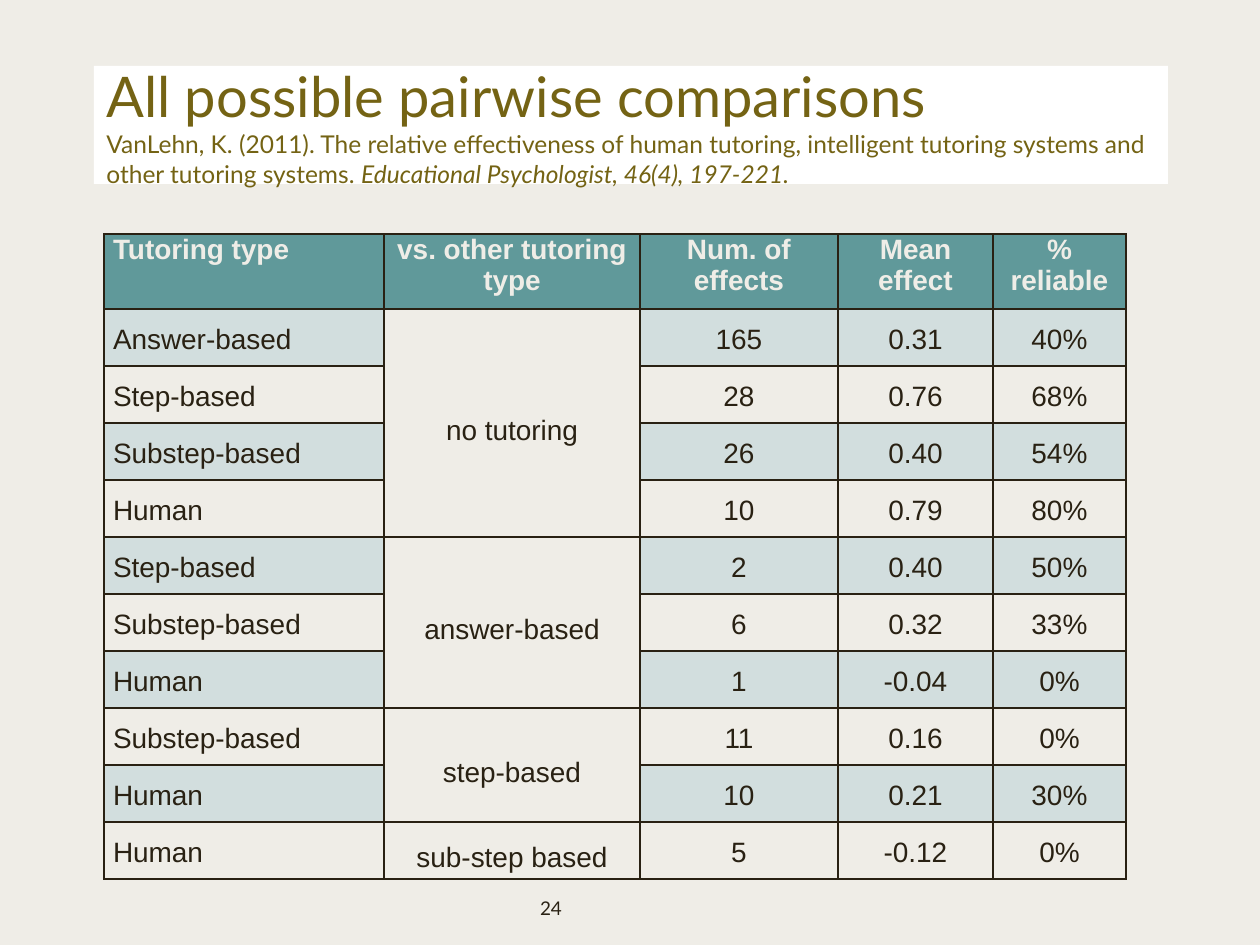
from dataclasses import dataclass

from lxml import etree
from pptx import Presentation, util as u
from pptx.dml.color import RGBColor
from pptx.enum import text as t
from pptx.oxml.ns import qn

TITLE = "All possible pairwise comparisons"
CITATION = ("VanLehn, K. (2011). The relative effectiveness of human tutoring, "
            "intelligent tutoring systems and other tutoring systems. ")
JOURNAL = "Educational Psychologist, 46(4), 197-221."
PAGE_NUMBER = "24"

HEADERS = ["Tutoring type", "vs. other tutoring type", "Num. of effects",
           "Mean effect", "% reliable"]
# Each comparison type with its rows: tutoring type, effects, mean, reliable
COMPARISONS = [
    ("no tutoring", [
        ("Answer-based", "165", "0.31", "40%"),
        ("Step-based", "28", "0.76", "68%"),
        ("Substep-based", "26", "0.40", "54%"),
        ("Human", "10", "0.79", "80%"),
    ]),
    ("answer-based", [
        ("Step-based", "2", "0.40", "50%"),
        ("Substep-based", "6", "0.32", "33%"),
        ("Human", "1", "-0.04", "0%"),
    ]),
    ("step-based", [
        ("Substep-based", "11", "0.16", "0%"),
        ("Human", "10", "0.21", "30%"),
    ]),
    ("sub-step based", [("Human", "5", "-0.12", "0%")]),
]


@dataclass(frozen=True)
class Theme:
    background: str = "EFEDE7"
    panel: str = "FFFFFF"
    title: str = "746314"
    ink: str = "292113"
    header: str = "60999A"
    band: str = "D2DEDE"
    heading_font: str = "Lato"
    table_font: str = "Arial"
    title_size: float = 32
    citation_size: float = 14
    table_size: float = 16
    number_size: float = 10.8


THEME = Theme()
PX = u.Inches(1) / 126
TITLE_BOX = (94, 66, 1074, 118)
NUMBER_BOX = (220, 892, 662, 32)
TABLE_LEFT, TABLE_TOP = 104, 234
COLUMN_WIDTHS = [280, 256, 198, 155, 133]
HEADER_HEIGHT, ROW_HEIGHT = 75, 57
CELL_MARGIN = 9
COMPARISON_COLUMN = 1


def px(length):
    return u.Emu(round(length * PX))


def set_fill(fill, color):
    fill.solid()
    fill.fore_color.rgb = RGBColor.from_string(color)


def add_text(paragraph, text, *, size, color, font, bold=False, italic=False):
    run = paragraph.add_run()
    run.text = text
    run.font.size = u.Pt(size)
    run.font.name = font
    run.font.bold = bold
    run.font.italic = italic
    run.font.color.rgb = RGBColor.from_string(color)


def add_box(slide, box):
    """Add a wrapping, vertically centred text box of fixed size."""
    shape = slide.shapes.add_textbox(*map(px, box))
    frame = shape.text_frame
    frame.word_wrap = True
    frame.auto_size = t.MSO_AUTO_SIZE.NONE
    frame.vertical_anchor = t.MSO_ANCHOR.MIDDLE
    return shape


def set_borders(cell):
    properties = cell._tc.get_or_add_tcPr()
    for position, side in enumerate(("a:lnL", "a:lnR", "a:lnT", "a:lnB")):
        line = etree.Element(qn(side), w=str(u.Pt(1)))
        fill = etree.SubElement(line, qn("a:solidFill"))
        etree.SubElement(fill, qn("a:srgbClr"), val=THEME.ink)
        properties.insert(position, line)


def format_cell(cell, fill):
    cell.margin_left = cell.margin_right = px(CELL_MARGIN)
    cell.margin_top = cell.margin_bottom = 0
    if fill:
        set_fill(cell.fill, fill)
    else:
        cell.fill.background()
    set_borders(cell)


def write_cell(cell, text, column, is_header=False):
    paragraph = cell.text_frame.paragraphs[0]
    if column > 0:
        paragraph.alignment = t.PP_ALIGN.CENTER
    if not is_header:
        paragraph.line_spacing = 1.5
        paragraph.space_after = u.Pt(10)
    add_text(paragraph, text, size=THEME.table_size, font=THEME.table_font,
             color=THEME.background if is_header else THEME.ink, bold=is_header)


def add_title(slide):
    shape = add_box(slide, TITLE_BOX)
    set_fill(shape.fill, THEME.panel)
    paragraph = shape.text_frame.paragraphs[0]
    style = dict(color=THEME.title, font=THEME.heading_font)
    add_text(paragraph, TITLE, size=THEME.title_size, **style)
    paragraph.add_line_break()
    add_text(paragraph, CITATION, size=THEME.citation_size, **style)
    add_text(paragraph, JOURNAL, size=THEME.citation_size, italic=True, **style)


def add_comparison_table(slide):
    heights = [HEADER_HEIGHT] + [ROW_HEIGHT] * sum(len(rows) for _, rows in COMPARISONS)
    table = slide.shapes.add_table(
        len(heights), len(HEADERS), px(TABLE_LEFT), px(TABLE_TOP),
        px(sum(COLUMN_WIDTHS)), px(sum(heights))).table
    table.first_row = table.horz_banding = False
    for column, width in zip(table.columns, COLUMN_WIDTHS):
        column.width = px(width)
    for row, height in zip(table.rows, heights):
        row.height = px(height)

    for column, header in enumerate(HEADERS):
        format_cell(table.cell(0, column), THEME.header)
        write_cell(table.cell(0, column), header, column, is_header=True)

    row = 1
    for comparison, effects in COMPARISONS:
        first_row = row
        for values in effects:
            band = THEME.band if row % 2 else None
            for column in range(len(HEADERS)):
                is_comparison = column == COMPARISON_COLUMN
                format_cell(table.cell(row, column), None if is_comparison else band)
            for column, value in zip((0, 2, 3, 4), values):
                write_cell(table.cell(row, column), value, column)
            row += 1
        cell = table.cell(first_row, COMPARISON_COLUMN)
        if len(effects) > 1:
            cell.merge(table.cell(row - 1, COMPARISON_COLUMN))
        cell.vertical_anchor = t.MSO_ANCHOR.MIDDLE
        write_cell(cell, comparison, COMPARISON_COLUMN)


def add_page_number(slide):
    paragraph = add_box(slide, NUMBER_BOX).text_frame.paragraphs[0]
    paragraph.alignment = t.PP_ALIGN.CENTER
    add_text(paragraph, PAGE_NUMBER, size=THEME.number_size,
             color=THEME.ink, font=THEME.heading_font)


def main():
    presentation = Presentation()
    presentation.slide_width = px(1260)
    presentation.slide_height = px(945)
    slide = presentation.slides.add_slide(presentation.slide_layouts[6])
    set_fill(slide.background.fill, THEME.background)
    add_title(slide)
    add_comparison_table(slide)
    add_page_number(slide)
    presentation.save("out.pptx")


if __name__ == "__main__":
    main()
